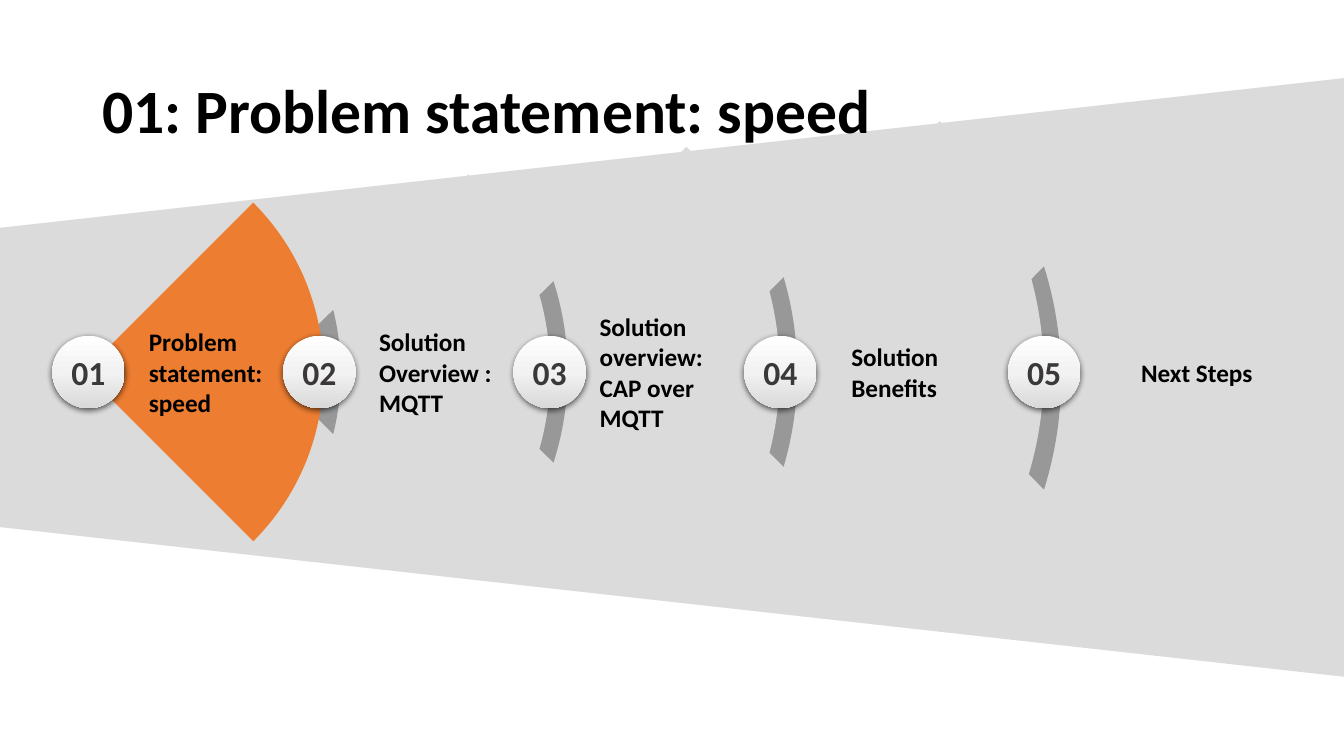
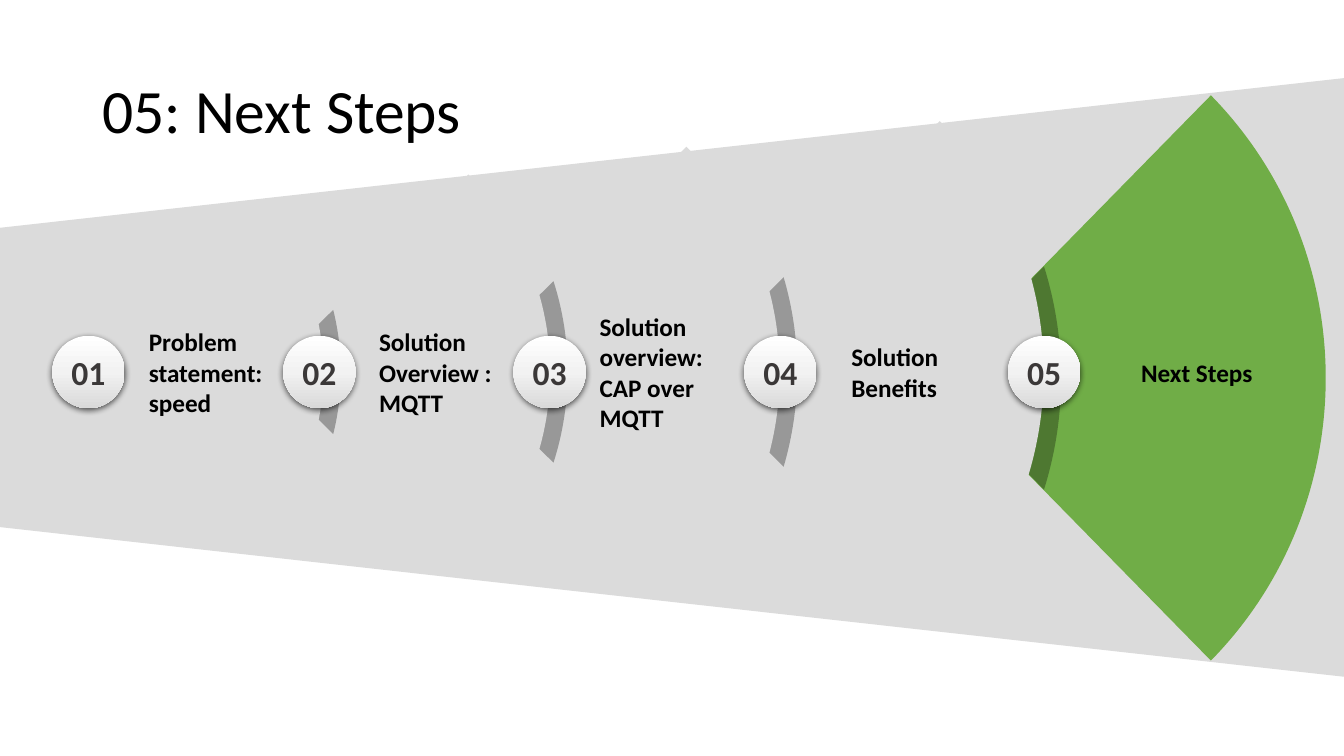
from copy import deepcopy
from math import asin, cos, pi, sin, tan

from lxml import etree
from pptx import Presentation
from pptx.dml.color import RGBColor
from pptx.enum.shapes import MSO_SHAPE
from pptx.enum.text import MSO_ANCHOR, MSO_AUTO_SIZE, PP_ALIGN
from pptx.oxml.ns import qn
from pptx.util import Pt

TRAPEZOID, OVAL = MSO_SHAPE.TRAPEZOID, MSO_SHAPE.OVAL
MIDDLE = MSO_ANCHOR.MIDDLE
LEFT, CENTER = PP_ALIGN.LEFT, PP_ALIGN.CENTER
FIXED, GROW = MSO_AUTO_SIZE.NONE, MSO_AUTO_SIZE.SHAPE_TO_FIT_TEXT

FONT = "Calibri"
BLACK, GREY, DARK = "000000", "DBDBDB", "3B3838"
BADGE_STOPS = [(0, "FFFFFF"), (0.5, "F2F2F2"), (1, "D9D9D9")]
AXIS, BADGE = 265.7, 51.8
LINE_HEIGHT, LABEL_PADDING = 21.8, 7.3
RING_WIDTH = 12.5

FANS = [
    (60, AXIS, 171, 171),
    (193.5, AXIS, 199.5, 199.5),
    (329.5, AXIS, 227.5, 227.5),
    (492, AXIS, 253.5, 253.5),
    (667, 270, 280, 285.5),
]
RING_HALF_HEIGHTS = [0, 44.4, 64.8, 67.7, 79.7]
BADGE_LEFTS = [37.3, 202.2, 366.7, 531.5, 720]
LABELS = [
    ("Problem statement: speed", 99.2, 102.2, 3),
    ("Solution Overview : MQTT", 263.7, 100, 3),
    ("Solution overview: CAP over MQTT", 421.2, 110.2, 4),
    ("Solution Benefits", 601, 137.5, 2),
    ("Next Steps", 808, 95, 1),
]
SLIDES = [
    ("01: Problem statement: speed", True, 0, "ED7D31"),
    ("05: Next Steps", False, 4, "70AD47"),
]


def paint(shape, color, opacity=100):
    shape.shadow.inherit = False
    shape.line.fill.background()
    shape.fill.solid()
    shape.fill.fore_color.rgb = RGBColor.from_string(color)
    if opacity < 100:
        tint = shape.element.spPr.find(qn("a:solidFill"))[0]
        etree.SubElement(tint, qn("a:alpha"), val=str(opacity * 1000))


def write(shape, text, size=18, bold=True, color=BLACK, align=LEFT,
          spacing=1.0, side_inset=7.2, wrap=True, fit=FIXED):
    frame = shape.text_frame
    frame.word_wrap = wrap
    frame.auto_size = fit
    frame.vertical_anchor = MIDDLE
    frame.margin_left = frame.margin_right = Pt(side_inset)
    paragraph = frame.paragraphs[0]
    paragraph.alignment = align
    paragraph.line_spacing = spacing
    run = paragraph.add_run()
    run.text = text
    run.font.name = FONT
    run.font.size = Pt(size)
    run.font.bold = bold
    run.font.color.rgb = RGBColor.from_string(color)


prs = Presentation()
prs.slide_width, prs.slide_height = Pt(960), Pt(540)

for title, title_bold, active, accent in SLIDES:
    slide = prs.slides.add_slide(prs.slide_layouts[6])
    shapes = slide.shapes

    beam = shapes.add_shape(TRAPEZOID, Pt(266.2), Pt(-210.4), Pt(427.6), Pt(960))
    beam.rotation = 270
    paint(beam, GREY)

    sectors = []
    for stage in reversed(range(len(FANS))):
        apex_x, apex_y, radius_x, radius_y = FANS[stage]
        fan_color = accent if stage == active else GREY
        sectors.append((apex_x, apex_y, apex_x, radius_x, radius_y, pi / 4, fan_color, 100))
        if stage > 0:
            center_x, _, inner_radius, _ = FANS[stage - 1]
            ring_radius = inner_radius + RING_WIDTH
            ring_angle = asin(RING_HALF_HEIGHTS[stage] / ring_radius)
            sectors.append((apex_x, apex_y, center_x, ring_radius, ring_radius,
                            ring_angle, BLACK, 30))

    for apex_x, apex_y, center_x, radius_x, radius_y, angle, color, opacity in sectors:
        end_x = center_x + radius_x * cos(angle)
        rise = radius_y * sin(angle)
        outline = shapes.build_freeform(Pt(end_x), Pt(apex_y - rise))
        outline.add_line_segments([
            (Pt(center_x + radius_x), Pt(apex_y)),
            (Pt(end_x), Pt(apex_y + rise)),
            (Pt(apex_x), Pt(apex_y)),
        ])
        sector = outline.convert_to_shape()
        paint(sector, color, opacity)

        pull = 4 / 3 * tan(angle / 2)
        control_x = end_x + pull * radius_x * sin(angle)
        control_rise = rise - pull * radius_y * cos(angle)
        to_middle, to_end = list(sector.element.spPr.iter(qn("a:lnTo")))[:2]
        curve = etree.Element(qn("a:cubicBezTo"))
        for control_y in (apex_y - control_rise, apex_y + control_rise):
            etree.SubElement(curve, qn("a:pt"), x=str(Pt(control_x) - sector.left),
                             y=str(Pt(control_y) - sector.top))
        curve.append(to_end[0])
        outline_parts = to_middle.getparent()
        outline_parts.replace(to_middle, curve)
        outline_parts.remove(to_end)

    heading = shapes.add_textbox(Pt(66.2), Pt(28.8), Pt(828), Pt(104.4))
    write(heading, title, size=44, bold=title_bold, spacing=0.9)

    for number, (badge_left, (label, label_left, label_width, lines)) in enumerate(
            zip(BADGE_LEFTS, LABELS), 1):
        badge = shapes.add_shape(OVAL, Pt(badge_left), Pt(AXIS - BADGE / 2),
                                 Pt(BADGE), Pt(BADGE))
        paint(badge, GREY)
        badge.fill.gradient()
        badge.fill.gradient_angle = 270
        stop_list = badge.element.spPr.find(qn("a:gradFill")).find(qn("a:gsLst"))
        stop_list.append(deepcopy(stop_list[-1]))
        for stop, (position, color) in zip(badge.fill.gradient_stops, BADGE_STOPS):
            stop.position = position
            stop.color.rgb = RGBColor.from_string(color)
        effects = badge.element.spPr.find(qn("a:effectLst"))
        shadow = etree.SubElement(effects, qn("a:outerShdw"), blurRad=str(Pt(4.5)),
                                  dist=str(Pt(1.5)), dir="5400000", rotWithShape="0")
        shadow_color = etree.SubElement(shadow, qn("a:srgbClr"), val=BLACK)
        etree.SubElement(shadow_color, qn("a:alpha"), val="63000")
        write(badge, f"{number:02}", size=24, color=DARK, align=CENTER, side_inset=0)

        label_height = LABEL_PADDING + LINE_HEIGHT * lines
        caption = shapes.add_textbox(Pt(label_left), Pt(AXIS - label_height / 2),
                                     Pt(label_width), Pt(label_height))
        write(caption, label, wrap=lines > 1, fit=GROW)

prs.save("out.pptx")
